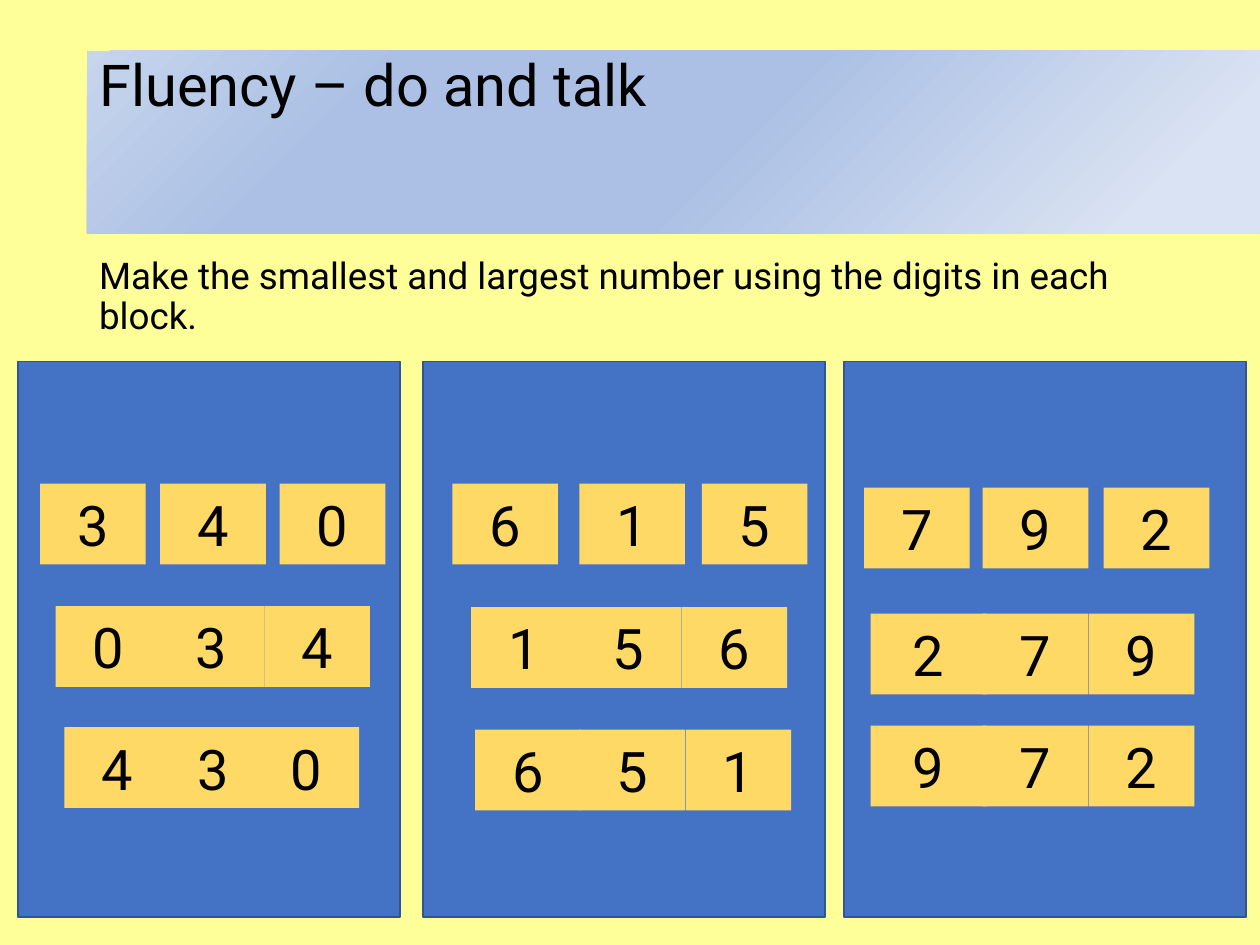
from dataclasses import dataclass

from lxml.etree import fromstring
from pptx import Presentation
from pptx.dml.color import RGBColor as RGB
from pptx.enum.shapes import MSO_SHAPE as Kind
from pptx.enum.text import MSO_ANCHOR as Anchor, MSO_AUTO_SIZE as Fit, PP_ALIGN as Align
from pptx.util import Cm, Pt

NS = "http://schemas.openxmlformats.org/drawingml/2006/main"


@dataclass(frozen=True)
class Theme:
    font: str = "Roboto"
    ink: str = "000000"
    page: str = "FFFF99"
    panel: str = "4472C4"
    edge: str = "325491"
    card: str = "FFD966"
    band: tuple = ((10, "DAE3F3"), (46, "ABC0E4"), (76, "ABC0E4"), (100, "C7D5ED"))
    head: int = 33
    body: int = 21
    digit: int = 32


def write(shape, text, size, font, color, align=Align.LEFT, anchor=Anchor.TOP,
          line=None, before=None):
    frame = shape.text_frame
    frame.word_wrap = True
    frame.auto_size = Fit.NONE
    frame.vertical_anchor = anchor
    para = frame.paragraphs[0]
    para.alignment = align
    para.line_spacing = line
    para.space_before = before
    run = para.add_run()
    run.text = text
    run.font.size = Pt(size)
    run.font.name = font
    run.font.color.rgb = RGB.from_string(color)


class Board:
    def __init__(self, slide, theme):
        self.slide = slide
        self.theme = theme
        fill = slide.background.fill
        fill.solid()
        fill.fore_color.rgb = RGB.from_string(theme.page)

    def text(self, shape, text, size, **form):
        write(shape, text, size, self.theme.font, self.theme.ink, **form)

    def rect(self, box, color, edge=None):
        shape = self.slide.shapes.add_shape(Kind.RECTANGLE, *map(Cm, box))
        shape.shadow.inherit = False
        shape.fill.solid()
        shape.fill.fore_color.rgb = RGB.from_string(color)
        if edge:
            shape.line.color.rgb = RGB.from_string(edge)
            shape.line.width = Pt(1)
        else:
            shape.line.fill.background()
        return shape

    def band(self, box):
        """Add a radial gradient strip behind everything else."""
        shape = self.rect(box, self.theme.page)
        stops = "".join(f'<a:gs pos="{pos * 1000}"><a:srgbClr val="{color}"/></a:gs>'
                        for pos, color in self.theme.band)
        grad = fromstring(
            f'<a:gradFill xmlns:a="{NS}" rotWithShape="1"><a:gsLst>{stops}</a:gsLst>'
            '<a:path path="circle"><a:fillToRect l="100000" t="100000"/></a:path>'
            '</a:gradFill>')
        props = shape.element.spPr
        props.replace(props.find(f"{{{NS}}}solidFill"), grad)
        self.slide.shapes.element.insert(2, shape.element)

    def title(self, text, box):
        shape = self.slide.shapes.title
        shape.left, shape.top, shape.width, shape.height = map(Cm, box)
        self.text(shape, text, self.theme.head, line=0.9)

    def note(self, text, box):
        shape = self.slide.shapes.add_textbox(*map(Cm, box))
        self.text(shape, text, self.theme.body, line=0.9, before=Pt(7.5))

    def panel(self, left, width):
        self.rect((left, 7.29, width, 11.2), self.theme.panel, self.theme.edge)

    def cards(self, digits, top, lefts, lead=2.13):
        """Lay a row of digit cards; lead is the width of the first one."""
        for i, (digit, left) in enumerate(zip(digits, lefts)):
            width = 2.13 if i else lead
            card = self.rect((left, top, width, 1.63), self.theme.card)
            self.text(card, digit, self.theme.digit, align=Align.CENTER,
                      anchor=Anchor.MIDDLE)


PANELS = ((0.36, 7.7), (8.53, 8.1), (17.02, 8.1))
ROWS = (
    ("340", 9.75, (0.81, 3.23, 5.64)),
    ("034", 12.22, (1.12, 3.2, 5.33)),
    ("430", 14.66, (1.3, 3.23, 5.11)),
    ("615", 9.75, (9.12, 11.68, 14.15)),
    ("156", 12.24, (9.5, 11.61, 13.74)),
    ("651", 14.71, (9.58, 11.68, 13.82)),
    ("792", 9.83, (17.42, 19.81, 22.25)),
    ("279", 12.37, (17.55, 19.81, 21.95), 2.34),
    ("972", 14.63, (17.55, 19.81, 21.95), 2.34),
)


def main():
    deck = Presentation()
    deck.slide_width, deck.slide_height = Cm(25.4), Cm(19.05)
    board = Board(deck.slides.add_slide(deck.slide_layouts[5]), Theme())
    board.band((1.75, 1.02, 23.65, 3.68))
    board.title("Fluency – do and talk", (1.75, 1.02, 21.9, 3.68))
    board.note("Make the smallest and largest number using the digits in each block.",
               (1.75, 5.08, 21.9, 12.09))
    for panel in PANELS:
        board.panel(*panel)
    for row in ROWS:
        board.cards(*row)
    deck.save("out.pptx")


if __name__ == "__main__":
    main()
